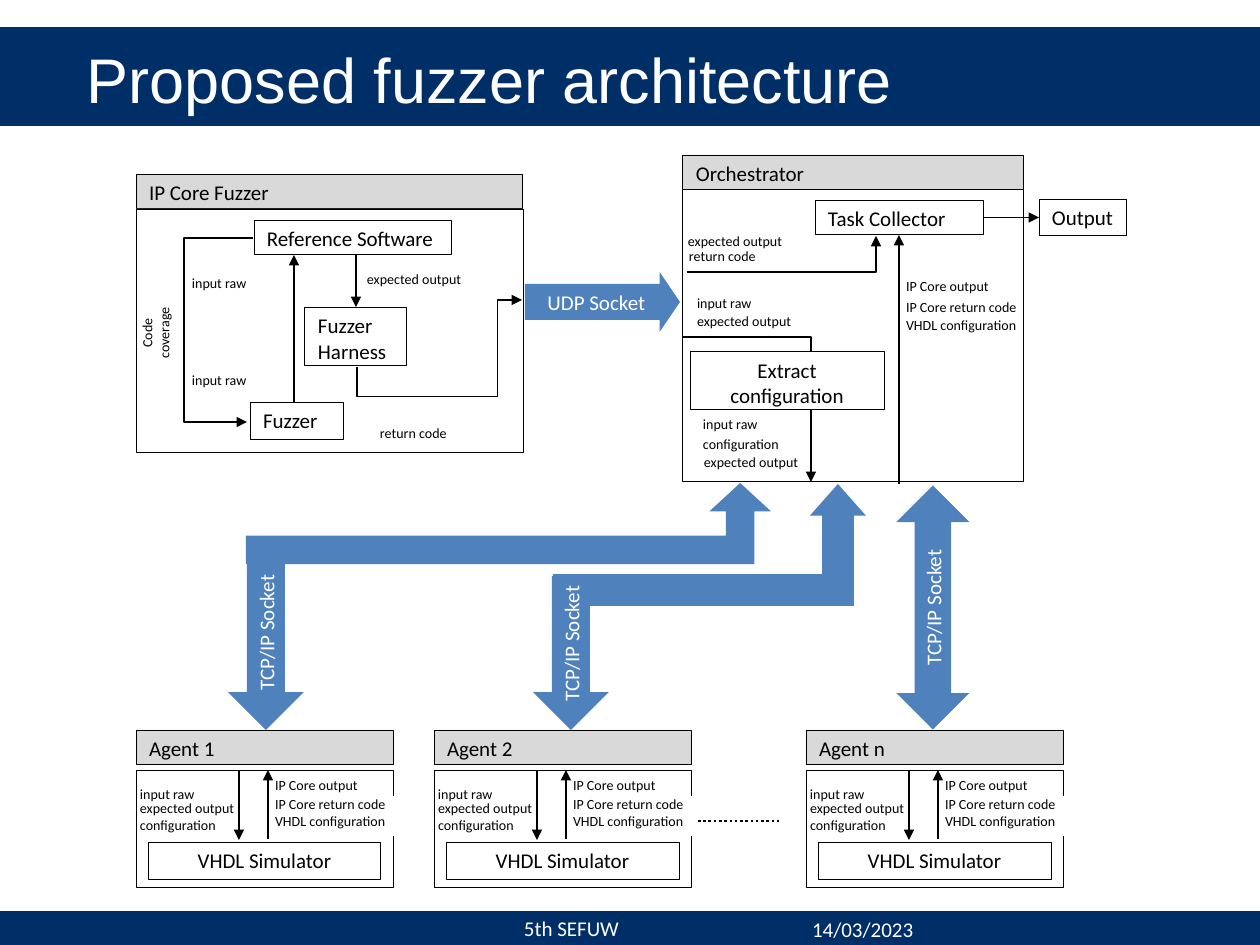
"""Build the proposed fuzzer architecture slide."""
import dataclasses
import functools

import pptx
import pptx.dml.color
import pptx.enum.dml
import pptx.enum.shapes
import pptx.enum.text
import pptx.oxml
import pptx.oxml.ns
import pptx.shapes.connector
import pptx.shapes.autoshape
import pptx.slide
import pptx.util
from lxml import etree

PX = pptx.util.Inches(10) / 1260
COLORS = {"navy": "002E67", "blue": "4F81BD", "grey": "D9D9D9", "white": "FFFFFF", "black": "000000"}
MSO = pptx.enum.shapes.MSO_SHAPE
ALIGN = pptx.enum.text.PP_ALIGN
ANCHOR = pptx.enum.text.MSO_ANCHOR
qn = pptx.oxml.ns.qn


@dataclasses.dataclass
class Box:
    x: int
    y: int
    w: int
    h: int
    text: str = ""
    fill: str = "white"
    line: str = ""
    kind: MSO = MSO.RECTANGLE
    adj: tuple[float, ...] = ()
    rot: int = 0
    size: int = 12
    font: str = "Calibri"
    color: str = "black"
    align: ALIGN = ALIGN.JUSTIFY
    anchor: ANCHOR = ANCHOR.TOP
    inset: tuple[int, int] = (13, 6)
    after: int = 6


@dataclasses.dataclass
class Wire:
    x1: int
    y1: int
    x2: int
    y2: int
    prst: str = "line"
    adj: tuple[float, ...] = ()
    rot: int = 0
    width: float = 0.75
    dotted: bool = False


Bar = functools.partial(Box, fill="navy")
Banner = functools.partial(Box, fill="", color="white", anchor=ANCHOR.MIDDLE, after=0)
Frame = functools.partial(Box, line="black")
Header = functools.partial(Frame, fill="grey")
Block = functools.partial(Box, fill="blue", color="white", align=ALIGN.CENTER, anchor=ANCHOR.MIDDLE)
Riser = functools.partial(Block, text="TCP/IP Socket", rot=270, inset=(0, 6))
Label = functools.partial(Box, size=8, fill="", inset=(0, 0))
Patch = functools.partial(Label, fill="white")
Note = functools.partial(Box, size=8, fill="")

BANNERS = [
    Bar(0, 911, 1260, 34),
    Bar(0, 29, 1260, 95, line="navy"),
    Banner(74, 32, 1033, 93, "Proposed fuzzer architecture", size=36, font="Arial", align=ALIGN.LEFT),
    Banner(799, 911, 169, 36, "14/03/2023", align=ALIGN.LEFT),
    Banner(372, 903, 399, 50, "5th SEFUW", align=ALIGN.CENTER),
]
SOCKETS = [
    Block(525, 272, 155, 60, "UDP Socket", kind=MSO.RIGHT_ARROW, adj=(0.6, 0.34)),
    Riser(178, 604, 176, 76, kind=MSO.LEFT_ARROW),
    Block(553, 484, 313, 122, kind=MSO.BENT_UP_ARROW, adj=(0.26, 0.23, 0.26)),
    Riser(494, 615, 154, 76, kind=MSO.LEFT_ARROW),
    Riser(811, 571, 244, 73, kind=MSO.LEFT_RIGHT_ARROW, inset=(13, 6)),
    Block(246, 483, 525, 81, kind=MSO.BENT_UP_ARROW, adj=(0.35, 0.38, 0.35)),
]
PANELS = [
    Header(136, 174, 386, 35, "IP Core Fuzzer"),
    Frame(136, 209, 387, 243),
    Frame(683, 190, 341, 292),
    Header(683, 155, 341, 35, "Orchestrator"),
]
ELBOWS = [
    Wire(253, 238, 247, 422, "bentConnector3", (11.5,)),
    Wire(473, 416, 406, 251, "bentConnector4", (-0.44, 0.85), 90),
    Wire(683, 337, 811, 482, "bentConnector2"),
    Wire(687, 272, 876, 236, "bentConnector2"),
]
STEPS = {
    "reference": Frame(254, 220, 198, 35, "Reference Software"),
    "harness": Frame(305, 307, 102, 59, "Fuzzer Harness"),
    "fuzzer": Frame(250, 402, 93, 38, "Fuzzer"),
    "extract": Frame(690, 351, 194, 59, "Extract configuration", align=ALIGN.CENTER),
    "collector": Frame(815, 200, 168, 35, "Task Collector"),
    "output": Frame(1039, 199, 88, 37, "Output"),
}
LABELS = [
    Note(110, 309, 93, 48, "Code coverage", rot=270, align=ALIGN.CENTER),
    Note(179, 268, 126, 32, "input raw"),
    Note(179, 366, 126, 32, "input raw"),
    Label(367, 271, 147, 30, "expected output"),
    Label(380, 425, 147, 30, "return code"),
    Label(688, 233, 112, 21, "expected output"),
    Label(689, 248, 147, 30, "return code"),
    Label(697, 294, 147, 30, "input raw"),
    Label(697, 312, 147, 30, "expected output"),
    Label(703, 416, 150, 18, "input raw"),
    Label(703, 436, 112, 21, "configuration"),
    Label(704, 454, 112, 21, "expected output"),
    Patch(906, 278, 92, 23, "IP Core output"),
    Patch(906, 299, 117, 23, "IP Core return code"),
    Patch(906, 317, 117, 23, "VHDL configuration"),
]
AGENTS = {"Agent 1": 136, "Agent 2": 434, "Agent n": 806}


def px(n: float) -> int:
    return round(n * PX)


def rgb(name: str) -> pptx.dml.color.RGBColor:
    return pptx.dml.color.RGBColor.from_string(COLORS[name])


def draw_box(s: pptx.slide.Slide, b: Box) -> pptx.shapes.autoshape.Shape:
    at = [px(n) for n in (b.x, b.y, b.w, b.h)]
    if b.fill:
        sp = s.shapes.add_shape(b.kind, *at)
        sp.shadow.inherit = False
        sp.fill.solid()
        sp.fill.fore_color.rgb = rgb(b.fill)
        if b.line:
            sp.line.color.rgb = rgb(b.line)
            sp.line.width = pptx.util.Pt(2 if b.line == "navy" else 0.5)
        else:
            sp.line.fill.background()
        for i, value in enumerate(b.adj):
            sp.adjustments[i] = value
    else:
        sp = s.shapes.add_textbox(*at)
    sp.rotation = b.rot
    if b.text:
        tf = sp.text_frame
        tf.word_wrap = True
        tf.vertical_anchor = b.anchor
        tf.margin_left = tf.margin_right = px(b.inset[0])
        tf.margin_top = tf.margin_bottom = px(b.inset[1])
        p = tf.paragraphs[0]
        p.text = b.text
        p.alignment = b.align
        p.space_after = pptx.util.Pt(b.after)
        p.font.size = pptx.util.Pt(b.size)
        p.font.name = b.font
        p.font.color.rgb = rgb(b.color)
    return sp


def draw_wire(s: pptx.slide.Slide, w: Wire) -> pptx.shapes.connector.Connector:
    straight = pptx.enum.shapes.MSO_CONNECTOR.STRAIGHT
    c = s.shapes.add_connector(straight, *[px(n) for n in (w.x1, w.y1, w.x2, w.y2)])
    c.line.color.rgb = rgb("black")
    c.line.width = pptx.util.Pt(w.width)
    pr = c.element.spPr
    if w.dotted:
        c.line.dash_style = pptx.enum.dml.MSO_LINE.ROUND_DOT
    else:
        etree.SubElement(pr.find(qn("a:ln")), qn("a:tailEnd"), type="triangle")
    etree.SubElement(pr, qn("a:effectLst"))
    geom = pr.find(qn("a:prstGeom"))
    geom.set("prst", w.prst)
    for i, value in enumerate(w.adj, 1):
        etree.SubElement(geom.find(qn("a:avLst")), qn("a:gd"), name=f"adj{i}", fmla=f"val {round(value * 100000)}")
    if w.rot:
        pr.find(qn("a:xfrm")).set("rot", str(w.rot * 60000))
    return c


def draw_agent(s: pptx.slide.Slide, name: str, x: int) -> None:
    for b in (
        Frame(x, 770, 257, 117),
        Header(x, 730, 257, 35, name),
        Label(x + 4, 816, 96, 20, "configuration"),
        Patch(x + 4, 785, 78, 21, "input raw"),
        Patch(x + 139, 777, 107, 23, "IP Core output"),
        Patch(x + 139, 796, 119, 23, "IP Core return code"),
        Label(x + 4, 800, 110, 21, "expected output"),
        Patch(x + 139, 813, 119, 23, "VHDL configuration"),
        Frame(x + 12, 842, 233, 38, "VHDL Simulator", align=ALIGN.CENTER),
    ):
        draw_box(s, b)
    draw_wire(s, Wire(x + 103, 771, x + 103, 840))
    draw_wire(s, Wire(x + 132, 839, x + 132, 770))


def main() -> None:
    prs = pptx.Presentation()
    prs.slide_width, prs.slide_height = px(1260), px(945)
    s = prs.slides.add_slide(prs.slide_layouts[6])
    for b in BANNERS + SOCKETS + PANELS:
        draw_box(s, b)
    for w in ELBOWS:
        draw_wire(s, w)
    steps = {name: draw_box(s, b) for name, b in STEPS.items()}
    draw_wire(s, Wire(294, 402, 294, 255))
    draw_wire(s, Wire(899, 484, 899, 235))
    draw_wire(s, Wire(356, 255, 356, 307)).end_connect(steps["harness"], 0)
    result = draw_wire(s, Wire(983, 218, 1039, 218))
    result.begin_connect(steps["collector"], 3)
    result.end_connect(steps["output"], 1)
    for b in LABELS:
        draw_box(s, b)
    for name, x in AGENTS.items():
        draw_agent(s, name, x)
    draw_wire(s, Wire(698, 821, 779, 821, width=1.5, dotted=True))
    prs.save("out.pptx")


if __name__ == "__main__":
    main()
